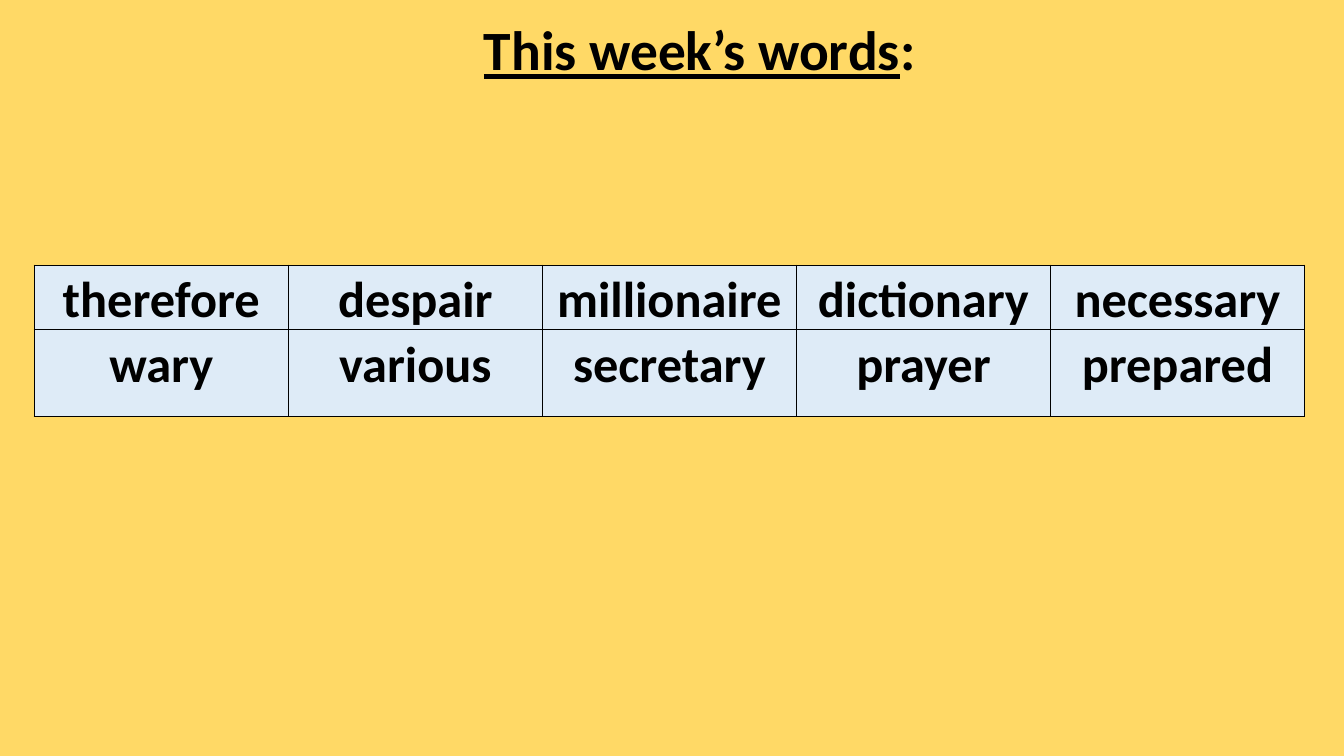
from lxml.etree import SubElement
from pptx import Presentation
from pptx.dml.color import RGBColor
from pptx.enum.text import MSO_ANCHOR, PP_ALIGN
from pptx.oxml.ns import qn
from pptx.util import Inches, Pt

INK = "000000"
WORDS = [
    ["therefore", "despair", "millionaire", "dictionary", "necessary"],
    ["wary", "various", "secretary", "prayer", "prepared"],
]
HEIGHTS = [0.55, 0.86]


def paint(fill, color):
    """Make a fill solid in a hex colour."""
    fill.solid()
    fill.fore_color.rgb = RGBColor.from_string(color)


def style(para, size, spacing):
    """Centre a paragraph and set its bold font."""
    para.alignment = PP_ALIGN.CENTER
    para.line_spacing = spacing
    font = para.font
    font.name, font.size, font.bold = "Calibri", Pt(size), True
    paint(font.fill, INK)


def border(cell, color, width):
    """Draw a line on all four sides of a cell."""
    props = cell._tc.get_or_add_tcPr()
    for place, side in enumerate(("lnL", "lnR", "lnT", "lnB")):
        line = SubElement(props, qn(f"a:{side}"), w=str(Pt(width)))
        fill = SubElement(line, qn("a:solidFill"))
        SubElement(fill, qn("a:srgbClr"), val=color)
        props.insert(place, line)


def add_title(slide, left, top, width, height):
    """Place the underlined heading in its box."""
    box = slide.shapes.add_textbox(*map(Inches, (left, top, width, height)))
    frame = box.text_frame
    frame.word_wrap = True
    frame.vertical_anchor = MSO_ANCHOR.TOP
    para = frame.paragraphs[0]
    style(para, 39.6, 0.9)
    head = para.add_run()
    head.text = "This week’s words"
    head.font.underline = True
    para.add_run().text = ": "


def add_words(slide, left, top, width):
    """Place the word table with equal columns."""
    count = len(WORDS[0])
    frame = slide.shapes.add_table(
        len(WORDS), count, *map(Inches, (left, top, width, sum(HEIGHTS))))
    table = frame.table
    table.first_row = table.horz_banding = False
    for col in table.columns:
        col.width = Inches(width / count)
    for row, height, words in zip(table.rows, HEIGHTS, WORDS):
        row.height = Inches(height)
        for cell, word in zip(row.cells, words):
            cell.text = word
            cell.margin_left = cell.margin_right = Inches(0.07)
            cell.margin_top = cell.margin_bottom = 0
            style(cell.text_frame.paragraphs[0], 36, 1.07)
            paint(cell.fill, "DEEBF7")
            border(cell, INK, 1)


def main():
    """Build and save the slide."""
    deck = Presentation()
    deck.slide_width, deck.slide_height = Inches(13.33), Inches(7.5)
    slide = deck.slides.add_slide(deck.slide_layouts[6])
    paint(slide.background.fill, "FFD966")
    add_title(slide, 4.65, 0.18, 4.58, 3.19)
    add_words(slide, 0.34, 2.63, 12.6)
    deck.save("out.pptx")


if __name__ == "__main__":
    main()
